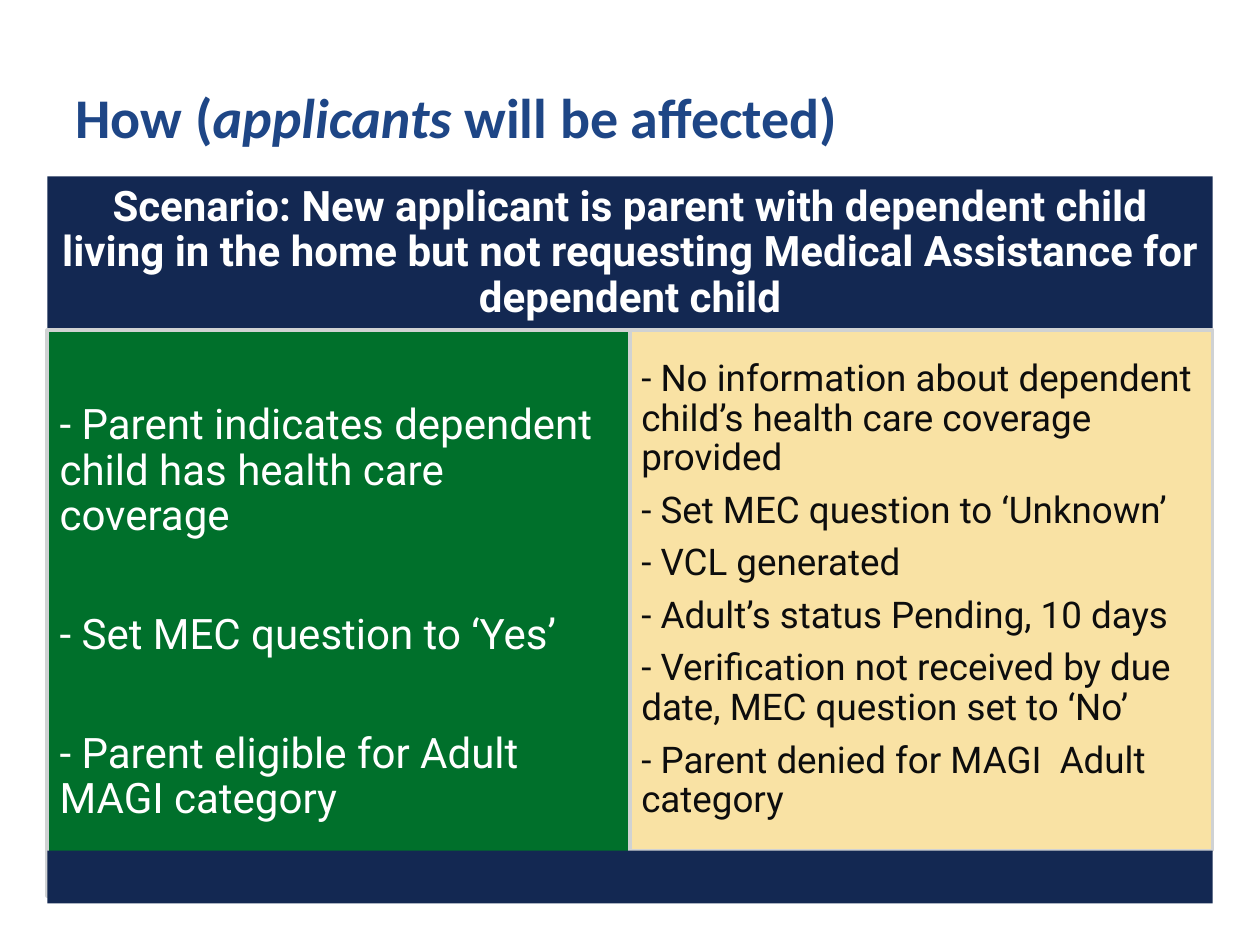
from pptx import Presentation
from pptx.dml.color import RGBColor
from pptx.enum.shapes import MSO_SHAPE as Shape
from pptx.enum.text import MSO_ANCHOR as Anchor, PP_ALIGN as Align
from pptx.util import Inches, Pt

WIDE, HIGH = 10, 7.5
EDGE = 0.0375 * WIDE
FULL = WIDE - 2 * EDGE
HALF = FULL / 2
TOP, MID, FOOT = 1.4, 2.62, 6.75

BLUE = RGBColor(0x1E, 0x46, 0x86)
NAVY = RGBColor(0x13, 0x28, 0x52)
GREEN = RGBColor(0x00, 0x70, 0x2B)
SAND = RGBColor(0xF9, 0xE2, 0xA4)
GREY = RGBColor(0xD0, 0xD2, 0xD3)
INK = RGBColor(0x0D, 0x0D, 0x0D)
WHITE = RGBColor(0xFF, 0xFF, 0xFF)

TITLE = [("How (", False), ("applicants", True), (" will be affected)", False)]
CASE = ["Scenario: New applicant is parent with dependent child living in "
        "the home but not requesting Medical Assistance for dependent child"]
KNOWN = [
    "- Parent indicates dependent child has health care coverage",
    "- Set MEC question to ‘Yes’",
    "- Parent eligible for Adult MAGI category",
]
UNKNOWN = [
    "- No information about dependent child’s health care coverage provided",
    "- Set MEC question to ‘Unknown’",
    "- VCL generated",
    "- Adult’s status Pending, 10 days",
    "- Verification not received by due date, MEC question set to ‘No’",
    "- Parent denied for MAGI  Adult category",
]


def style(item, form):
    for name, value in form.items():
        setattr(item, name, value)


def set_font(font, color, **form):
    style(font, form)
    font.color.rgb = color


def add_title(slide):
    box = slide.shapes.add_textbox(*map(Inches, (0.5, 0.3, 8.08, 1.25)))
    style(box.text_frame, {"word_wrap": True, "vertical_anchor": Anchor.MIDDLE})
    para = box.text_frame.paragraphs[0]
    for text, slant in TITLE:
        run = para.add_run()
        run.text = text
        set_font(run.font, BLUE, name="Calibri", size=Pt(32), bold=True, italic=slant)


def add_panel(slide, at, fill, edge=None):
    panel = slide.shapes.add_shape(Shape.RECTANGLE, *map(Inches, at))
    panel.shadow.inherit = False
    panel.fill.solid()
    panel.fill.fore_color.rgb = fill
    if edge is None:
        panel.line.fill.background()
    else:
        panel.line.color.rgb = edge
        panel.line.width = Pt(2)
    return panel


def fill_text(panel, lines, color, size, gap=0, pad=0.1, bold=False, align=Align.LEFT):
    frame = panel.text_frame
    style(frame, {"word_wrap": True, "vertical_anchor": Anchor.MIDDLE})
    style(frame, {f"margin_{side}": Inches(pad)
                  for side in ("left", "top", "right", "bottom")})
    frame.text = "\n".join(lines)
    for i, para in enumerate(frame.paragraphs):
        style(para, {"alignment": align, "line_spacing": 0.9})
        if i:
            para.space_before = Pt(gap)
        set_font(para.font, color, name="Roboto", size=Pt(size), bold=bold)


def main():
    deck = Presentation()
    style(deck, {"slide_width": Inches(WIDE), "slide_height": Inches(HIGH)})
    slide = deck.slides.add_slide(deck.slide_layouts[6])
    add_title(slide)

    head = add_panel(slide, (EDGE, TOP, FULL, MID - TOP), NAVY)
    fill_text(head, CASE, WHITE, 24, bold=True, align=Align.CENTER)

    left = add_panel(slide, (EDGE, MID, HALF, 4.49), GREEN, GREY)
    fill_text(left, KNOWN, WHITE, 24, gap=42)

    right = add_panel(slide, (EDGE + HALF, MID, HALF, FOOT - MID), SAND, GREY)
    fill_text(right, UNKNOWN, INK, 21, gap=7.35, pad=0.09)

    add_panel(slide, (EDGE, FOOT, FULL, 0.42), NAVY)
    deck.save("out.pptx")


if __name__ == "__main__":
    main()
